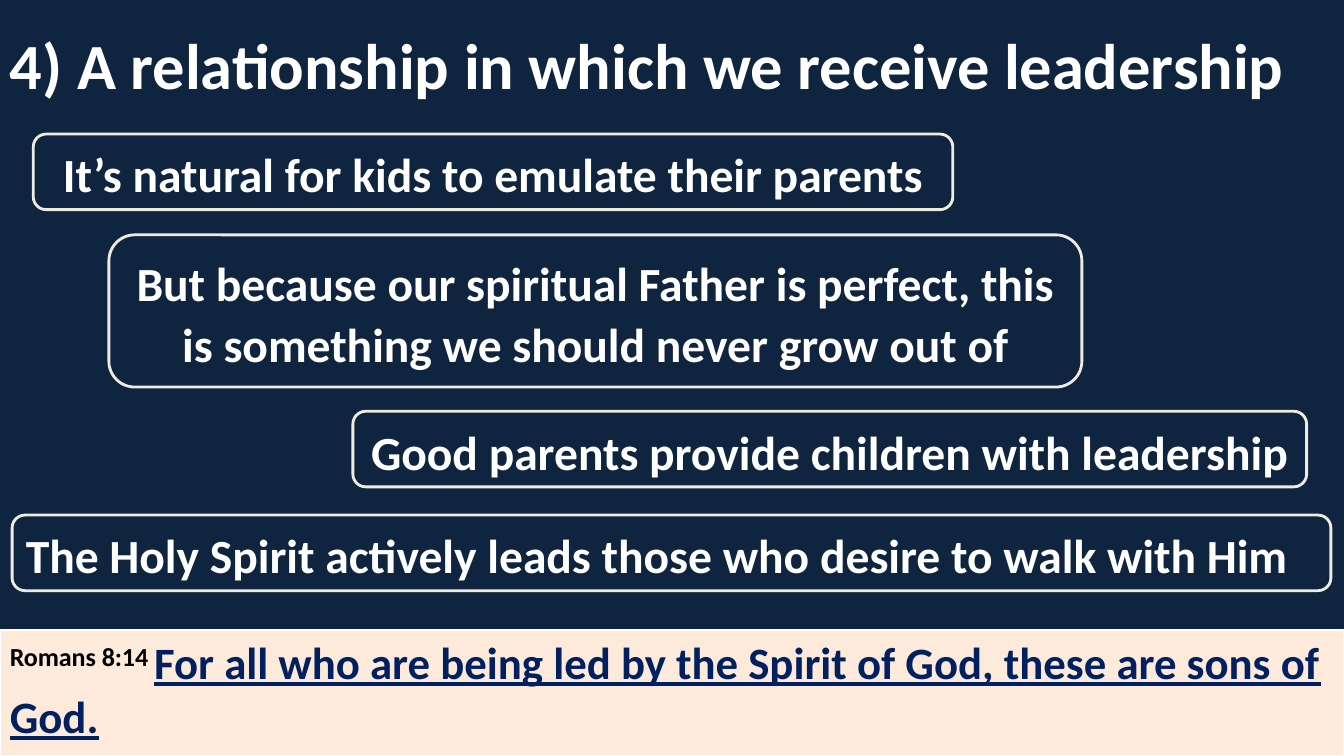
from pptx import Presentation
from pptx.dml.color import RGBColor as RGB
from pptx.enum.shapes import MSO_SHAPE as SHAPE
from pptx.enum.text import MSO_ANCHOR as ANCHOR, PP_ALIGN as ALIGN
from pptx.util import Emu, Pt

PX = 9144  # 100 px to the inch
THEME = {
    "font": "Calibri",
    "navy": RGB.from_string("0F243E"),
    "white": RGB.from_string("FFFFFF"),
    "ivory": RGB.from_string("EEECE1"),
    "peach": RGB.from_string("FDEADA"),
    "black": RGB.from_string("000000"),
    "blue": RGB.from_string("002060"),
    "title": Pt(46),
    "point": Pt(34),
    "verse": Pt(32),
}


def add_box(kind, box, fill, line, width):
    sp = s.shapes.add_shape(kind, *[Emu(v * PX) for v in box])
    sp.shadow.inherit = False
    sp.fill.solid()
    sp.fill.fore_color.rgb = THEME[fill]
    sp.line.color.rgb = THEME[line]
    sp.line.width = Pt(width)
    sp.text_frame.word_wrap = True
    return sp


def add_run(p, text, size, color, underline=False):
    r = p.add_run()
    r.text = text
    fmt = {"name": THEME["font"], "size": THEME[size], "bold": True, "underline": underline}
    for key, value in fmt.items():
        setattr(r.font, key, value)
    r.font.color.rgb = THEME[color]
    return r


prs = Presentation()
prs.slide_width, prs.slide_height = Emu(1333 * PX), Emu(750 * PX)
s = prs.slides.add_slide(prs.slide_layouts[6])
s.background.fill.solid()
s.background.fill.fore_color.rgb = THEME["navy"]

# Title
sp = s.shapes.add_textbox(0, Emu(10 * PX), prs.slide_width, Emu(107 * PX))
tf = sp.text_frame
tf.word_wrap = True
tf.vertical_anchor = ANCHOR.MIDDLE
add_run(tf.paragraphs[0], "4) A relationship in which we receive leadership", "title", "white")

# Points in rounded callouts
points = [
    ((33, 133, 912, 75), ALIGN.CENTER, "It’s natural for kids to emulate their parents"),
    ((108, 233, 965, 151), ALIGN.CENTER,
     "But because our spiritual Father is perfect, this is something we should never grow out of"),
    ((350, 408, 946, 75), ALIGN.CENTER, "Good parents provide children with leadership"),
    ((12, 511, 1308, 75), ALIGN.LEFT,
     "The Holy Spirit actively leads those who desire to walk with Him"),
]
for box, align, text in points:
    sp = add_box(SHAPE.ROUNDED_RECTANGULAR_CALLOUT, box, "navy", "ivory", 2)
    for i, value in enumerate((-0.22, 0.5, 0.17)):
        sp.adjustments[i] = value
    tf = sp.text_frame
    tf.vertical_anchor = ANCHOR.MIDDLE
    p = tf.paragraphs[0]
    p.alignment = align
    p.line_spacing = 1.07
    add_run(p, text, "point", "white")

# Verse band
sp = add_box(SHAPE.RECTANGLE, (0, 625, 1333, 125), "peach", "white", 1.5)
tf = sp.text_frame
tf.vertical_anchor = ANCHOR.TOP
p = tf.paragraphs[0]
p.alignment = ALIGN.LEFT
r = add_run(p, "Romans 8:14 ", "verse", "black")
r.font._element.set("baseline", "30000")
add_run(p, "For all who are being led by the Spirit of God, these are sons of God.",
        "verse", "blue", underline=True)

prs.save("out.pptx")
